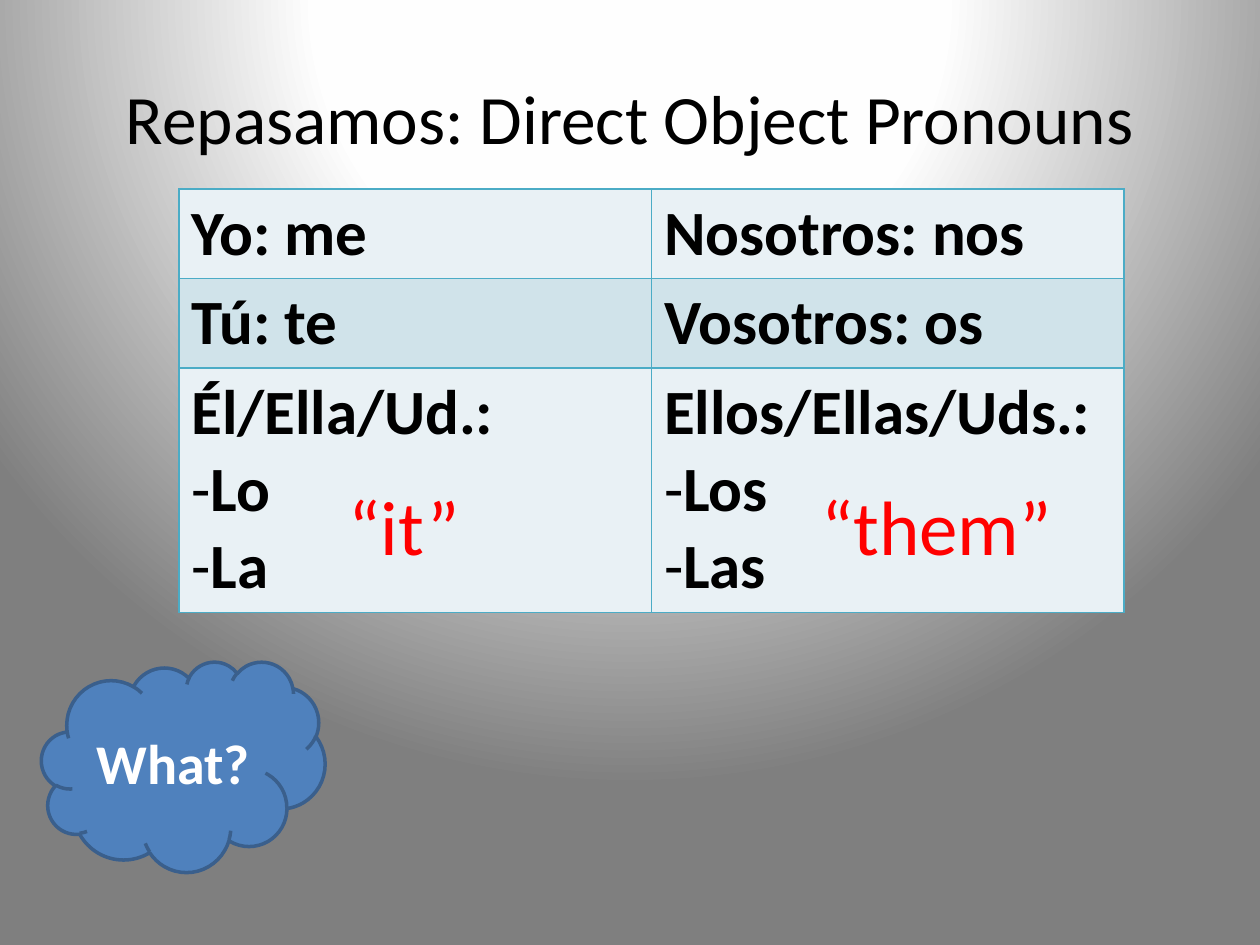
from pptx import Presentation
from pptx.dml.color import RGBColor
from pptx.enum.shapes import MSO_SHAPE
from pptx.enum.text import MSO_ANCHOR, MSO_AUTO_SIZE, PP_ALIGN
from pptx.oxml import parse_xml
from pptx.oxml.ns import nsdecls
from pptx.util import Inches, Pt

BLACK = RGBColor(0x00, 0x00, 0x00)
WHITE = RGBColor(0xFF, 0xFF, 0xFF)
RED = RGBColor(0xFF, 0x00, 0x00)
BLUE = RGBColor(0x4F, 0x81, 0xBD)
DARK_BLUE = RGBColor(0x3A, 0x5F, 0x8C)
TEAL = RGBColor(0x4B, 0xAC, 0xC6)
BANDS = RGBColor(0xE9, 0xF1, 0xF5), RGBColor(0xD0, 0xE3, 0xEA)
GRADIENT = (0, WHITE), (40, RGBColor(0xFE, 0xFE, 0xFE)), (100, RGBColor(0x7F, 0x7F, 0x7F))

PRONOUNS = [
    ["Yo: me", "Nosotros: nos"],
    ["Tú: te", "Vosotros: os"],
    ["Él/Ella/Ud.:\n-Lo\n-La", "Ellos/Ellas/Uds.:\n-Los\n-Las"],
]
ROW_HEIGHTS = [0.71, 0.71, 1.94]


def set_background(s):
    s.background.fill.solid()
    stops = "".join(
        f'<a:gs pos="{pos * 1000}"><a:srgbClr val="{color}"/></a:gs>'
        for pos, color in GRADIENT
    )
    gradient = parse_xml(
        f'<a:gradFill {nsdecls("a")} rotWithShape="1"><a:gsLst>{stops}</a:gsLst>'
        '<a:path path="circle"><a:fillToRect l="50000" t="-80000" r="50000" b="180000"/>'
        "</a:path></a:gradFill>"
    )
    solid = s.background._cSld.find(".//{*}bgPr/{*}solidFill")
    solid.getparent().replace(solid, gradient)


def format_text(p, size, color, bold=False, align=PP_ALIGN.LEFT):
    p.alignment = align
    for r in p.runs:
        r.font.name = "Calibri"
        r.font.size = Pt(size)
        r.font.bold = bold
        r.font.color.rgb = color


def add_label(s, text, left, top, width, height, size, color):
    sp = s.shapes.add_textbox(Inches(left), Inches(top), Inches(width), Inches(height))
    tf = sp.text_frame
    tf.word_wrap = True
    tf.text = text
    format_text(tf.paragraphs[0], size, color)
    return tf


def add_title(s, text):
    tf = add_label(s, text, 0.5, 0.3, 9, 1.25, 39.6, BLACK)
    tf.vertical_anchor = MSO_ANCHOR.MIDDLE
    tf.paragraphs[0].alignment = PP_ALIGN.CENTER


def add_callout(s, text, left, width):
    tf = add_label(s, text, left, 3.75, width, 0.84, 44, RED)
    tf.auto_size = MSO_AUTO_SIZE.SHAPE_TO_FIT_TEXT


def set_dash_bullet(p):
    pPr = p._p.get_or_add_pPr()
    pPr.set("marL", "0")
    pPr.set("indent", "0")
    pPr.append(parse_xml(f'<a:buFont {nsdecls("a")} typeface="Calibri"/>'))
    pPr.append(parse_xml(f'<a:buChar {nsdecls("a")} char="-"/>'))


def set_borders(cell):
    tcPr = cell._tc.get_or_add_tcPr()
    for i, side in enumerate(("lnL", "lnR", "lnT", "lnB")):
        tcPr.insert(i, parse_xml(
            f'<a:{side} {nsdecls("a")} w="{Pt(1)}"><a:solidFill>'
            f'<a:srgbClr val="{TEAL}"/></a:solidFill></a:{side}>'
        ))


def fill_cell(cell, text, color):
    cell.fill.solid()
    cell.fill.fore_color.rgb = color
    set_borders(cell)
    cell.text_frame.text = text.replace("-", "")
    for p, line in zip(cell.text_frame.paragraphs, text.split("\n")):
        format_text(p, 36, BLACK, bold=True)
        if line.startswith("-"):
            set_dash_bullet(p)


def add_pronoun_table(s):
    frame = s.shapes.add_table(
        len(PRONOUNS), 2, Inches(1.42), Inches(1.5), Inches(7.5), Inches(sum(ROW_HEIGHTS))
    )
    table = frame.table
    table.first_row = False
    for i, (texts, height) in enumerate(zip(PRONOUNS, ROW_HEIGHTS)):
        table.rows[i].height = Inches(height)
        for j, text in enumerate(texts):
            fill_cell(table.cell(i, j), text, BANDS[i % 2])


def add_cloud(s, text):
    sp = s.shapes.add_shape(
        MSO_SHAPE.CLOUD, Inches(0.33), Inches(5.25), Inches(2.25), Inches(1.67)
    )
    sp.shadow.inherit = False
    sp.fill.solid()
    sp.fill.fore_color.rgb = BLUE
    sp.line.color.rgb = DARK_BLUE
    sp.line.width = Pt(2)
    tf = sp.text_frame
    tf.text = text
    tf.vertical_anchor = MSO_ANCHOR.MIDDLE
    format_text(tf.paragraphs[0], 32, WHITE, bold=True, align=PP_ALIGN.CENTER)


def main():
    prs = Presentation()
    prs.slide_width = Inches(10)
    prs.slide_height = Inches(7.5)
    s = prs.slides.add_slide(prs.slide_layouts[6])
    set_background(s)
    add_title(s, "Repasamos: Direct Object Pronouns")
    add_pronoun_table(s)
    add_callout(s, "“it”", 2.67, 1.17)
    add_callout(s, "“them”", 6.42, 2.17)
    add_cloud(s, "What?")
    prs.save("out.pptx")


if __name__ == "__main__":
    main()
